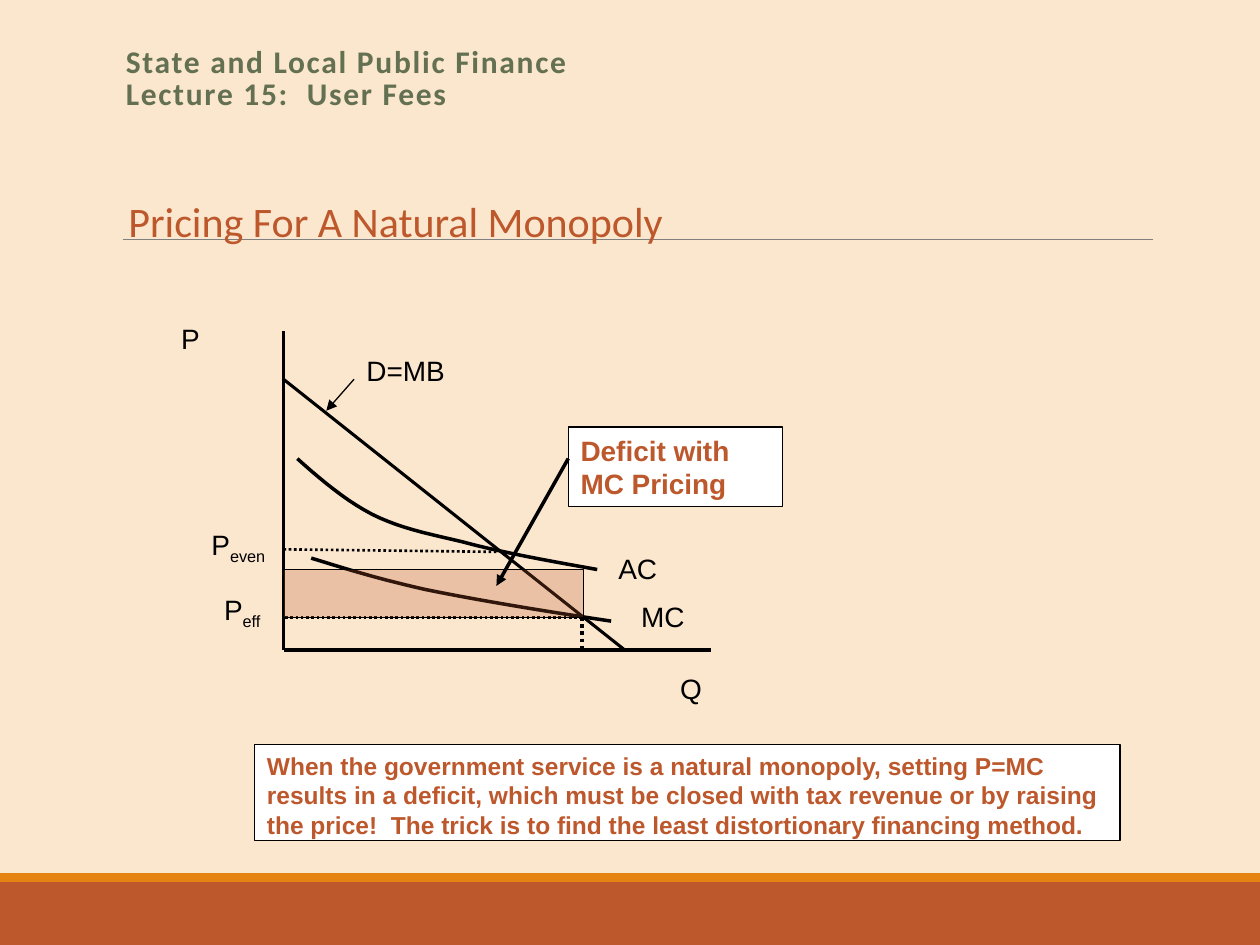
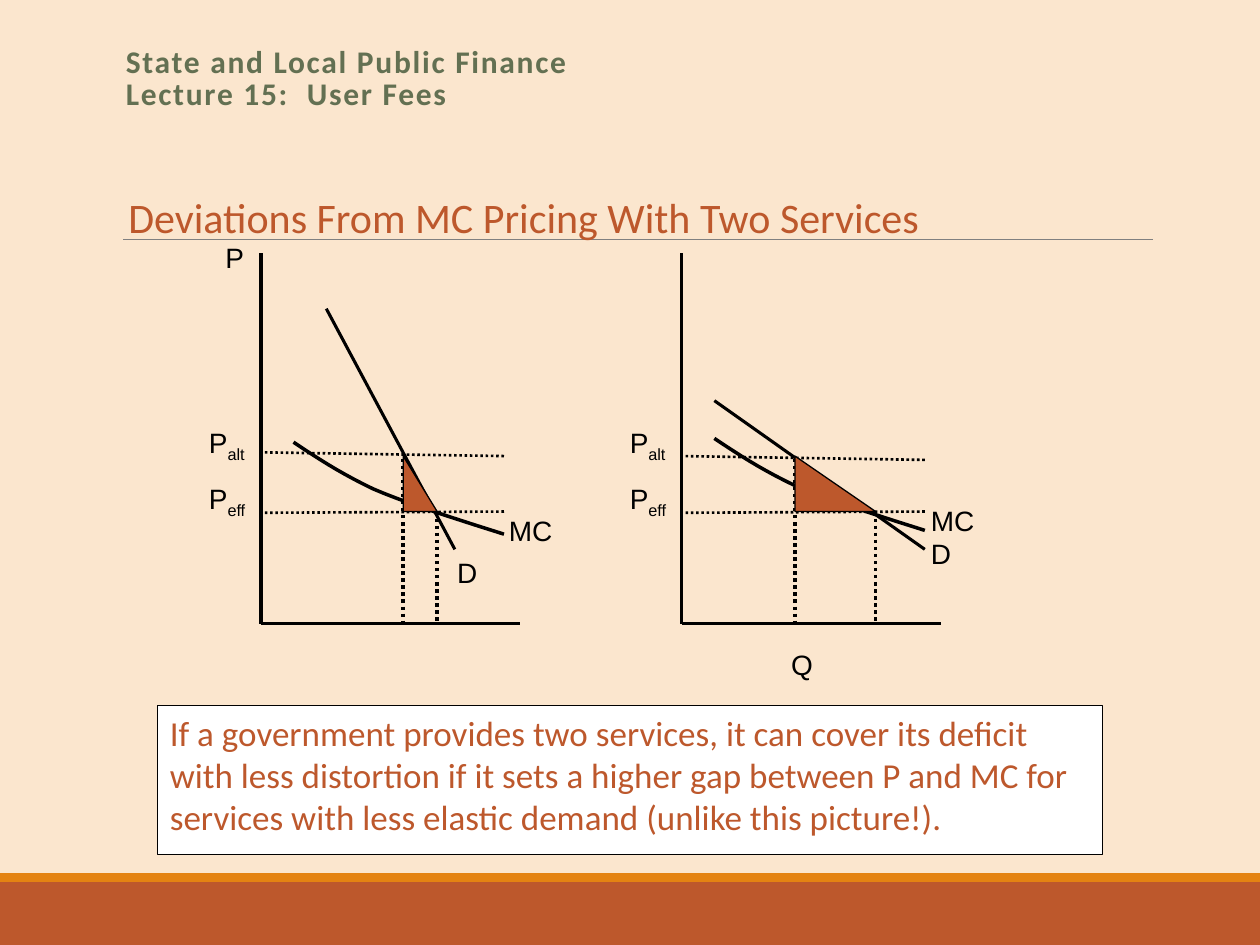
from lxml import etree
from pptx import Presentation, util as u
from pptx.dml import color
from pptx.enum import dml, shapes, text
from pptx.oxml import ns

RUST, ORANGE, GREEN, CREAM = "BD582C", "E48312", "637052", "FBE6CE"
BLACK, WHITE, GREY = "000000", "FFFFFF", "808080"
COURSE = "State and Local Public Finance\nLecture 15:  User Fees"
LABEL = {"size": u.Pt(16), "name": "Arial"}
LABEL_BOLD = LABEL | {"bold": True}
NOTE_BOLD = {"size": u.Pt(14), "name": "Arial", "bold": True}
NOTE = {"size": u.Pt(20), "name": "Calibri"}
TITLE = {"size": u.Pt(24), "name": "Calibri"}
HEADER = {"size": u.Pt(18), "name": "Calibri", "bold": True}


def rgb(value):
    """Turn a hex string into a colour."""
    return color.RGBColor.from_string(value)


def inches(*values):
    """Turn numbers into lengths."""
    return [u.Inches(value) for value in values]


def bezier(start, *segments, steps=10):
    """Sample points along joined cubic curves."""
    points = [start]
    for first, second, end in segments:
        corners = (points[-1], first, second, end)
        for step in range(1, steps + 1):
            t = step / steps
            weights = ((1 - t) ** 3, 3 * t * (1 - t) ** 2, 3 * t * t * (1 - t), t ** 3)
            points.append(tuple(sum(w * p[axis] for w, p in zip(weights, corners))
                                for axis in (0, 1)))
    return points


class Lecture:
    """Hold the deck style and the current slide."""

    def __init__(self):
        """Start an empty deck."""
        self.deck = Presentation()
        self.deck.slide_width, self.deck.slide_height = inches(10, 7.5)
        self.page = None

    def slide(self, title, top, width, wrap=True):
        """Add a slide with background, bands, rule, header and title."""
        self.page = self.deck.slides.add_slide(self.deck.slide_layouts[6])
        fill = self.page.background.fill
        fill.solid()
        fill.fore_color.rgb = rgb(CREAM)
        self.shape((0, 7, 10, 0.5), RUST, outline=None)
        self.shape((0, 6.93, 10, 0.07), ORANGE, outline=None)
        self.line((0.98, 1.9), (9.15, 1.9), 0.5, hue=GREY)
        self.label(COURSE, (0.9, 0.33, 8.25, 0.65), HEADER, GREEN, spacing=0.85, tracking=1)
        self.label(title, (0.92, top, width, 0.5), TITLE, RUST, wrap=wrap)

    def set_text(self, box, content, style, hue, wrap=True, spacing=None, tracking=None):
        """Fill a shape with text, where an underscore starts a subscript."""
        frame = box.text_frame
        frame.word_wrap = wrap
        frame.vertical_anchor = text.MSO_ANCHOR.TOP
        para = frame.paragraphs[0]
        para.alignment = text.PP_ALIGN.LEFT
        if spacing:
            para.line_spacing = spacing
        for row, words in enumerate(content.split("\n")):
            if row:
                para.add_line_break()
            for part, piece in enumerate(words.split("_")):
                span = para.add_run()
                span.text = piece
                for name, value in style.items():
                    setattr(span.font, name, value)
                span.font.color.rgb = rgb(hue)
                marks = span._r.get_or_add_rPr()
                if part:
                    marks.set("baseline", "-25000")
                if tracking:
                    marks.set("spc", str(tracking * 100))

    def label(self, content, place, style=LABEL, hue=BLACK, **options):
        """Add a text box."""
        box = self.page.shapes.add_textbox(*inches(*place))
        self.set_text(box, content, style, hue, **options)

    def shape(self, place, fill, outline=BLACK, kind="RECTANGLE", alpha=None):
        """Add a filled preset shape."""
        box = self.page.shapes.add_shape(getattr(shapes.MSO_SHAPE, kind), *inches(*place))
        box.shadow.inherit = False
        box.fill.solid()
        box.fill.fore_color.rgb = rgb(fill)
        if alpha:
            tint = box._element.spPr.find(".//" + ns.qn("a:srgbClr"))
            etree.SubElement(tint, ns.qn("a:alpha")).set("val", str(alpha * 1000))
        if outline:
            self.stroke(box.line, 0.75, outline)
        else:
            box.line.fill.background()
        return box

    def note(self, content, place, style):
        """Add a white box with rust text."""
        self.set_text(self.shape(place, WHITE), content, style, RUST)

    def stroke(self, line, width, hue=BLACK, dotted=False):
        """Format an outline."""
        line.color.rgb = rgb(hue)
        formats = {"width": u.Pt(width)}
        if dotted:
            formats["dash_style"] = dml.MSO_LINE.ROUND_DOT
        for name, value in formats.items():
            setattr(line, name, value)

    def line(self, start, end, width=2, hue=BLACK, dotted=False, arrow=False):
        """Add a straight line or arrow."""
        wire = self.page.shapes.add_connector(
            shapes.MSO_CONNECTOR.STRAIGHT, *inches(*start, *end))
        self.stroke(wire.line, width, hue, dotted)
        properties = wire._element.spPr
        if arrow:
            outline = properties.find(ns.qn("a:ln"))
            etree.SubElement(outline, ns.qn("a:tailEnd")).set("type", "triangle")
        etree.SubElement(properties, ns.qn("a:effectLst"))

    def curve(self, *knots):
        """Add an open smooth curve."""
        points = [inches(*point) for point in bezier(*knots)]
        builder = self.page.shapes.build_freeform(*points[0])
        builder.add_line_segments(points[1:], close=False)
        outline = builder.convert_to_shape()
        outline.shadow.inherit = False
        outline.fill.background()
        self.stroke(outline.line, 2)

    def axes(self, left, top, right, bottom):
        """Add a price axis and a quantity axis."""
        self.line((left, top), (left, bottom))
        self.line((left, bottom), (right, bottom))


def monopoly(lecture):
    """Draw the natural monopoly slide."""
    lecture.slide("Pricing For A Natural Monopoly", 1.5, 4.48, wrap=False)
    left, bottom, efficient = 2.25, 5.16, (4.62, 4.9)
    lecture.axes(left, 2.63, 5.64, bottom)
    lecture.line((left, 3.01), (4.96, bottom), 1.75)
    for content, place in (
        ("P", (1.34, 2.5, 0.34, 0.51)),
        ("Q", (5.3, 5.28, 0.34, 0.51)),
        ("AC", (4.81, 4.33, 0.57, 0.38)),
        ("D=MB", (2.81, 2.76, 1.13, 0.38)),
        ("P_eff", (1.68, 4.65, 0.91, 0.38)),
        ("P_even", (1.58, 4.14, 0.91, 0.38)),
        ("MC", (4.99, 4.71, 0.57, 0.38)),
    ):
        lecture.label(content, place)
    lecture.note(
        "When the government service is a natural monopoly, setting P=MC results in a deficit, "
        "which must be closed with tax revenue or by raising the price!  The trick is to find "
        "the least distortionary financing method.", (2.02, 5.91, 6.87, 0.76), NOTE_BOLD)
    lecture.curve((2.36, 3.64), ((2.55, 3.81), (2.74, 3.97), (2.95, 4.08)),
                  ((3.17, 4.19), (3.37, 4.23), (3.67, 4.3)),
                  ((3.96, 4.38), (4.35, 4.45), (4.74, 4.52)))
    lecture.curve((2.47, 4.43), ((2.73, 4.51), (2.98, 4.59), (3.38, 4.68)),
                  ((3.77, 4.76), (4.31, 4.85), (4.85, 4.93)))
    lecture.line(efficient, (left, efficient[1]), 1.5, dotted=True)
    lecture.line((3.94, 4.38), (left, 4.36), 1.5, dotted=True)
    lecture.line((2.81, 3.01), (2.59, 3.26), 0.75, arrow=True)
    lecture.shape((left, 4.52, 2.38, 0.38), RUST, alpha=26)
    lecture.note("Deficit with MC Pricing", (4.51, 3.39, 1.7, 0.63), LABEL_BOLD)
    lecture.line((4.51, 3.64), (3.94, 4.65), arrow=True)
    lecture.line(efficient, (efficient[0], bottom), dotted=True)


def service(lecture, left, demand, alternative, curve_top, quantities, labels):
    """Draw one market with its demand, marginal cost and welfare loss."""
    right, bottom, efficient = left + 1.93, 4.95, 4.06
    low, high = quantities
    lecture.axes(left, 2.01, left + 2.06, bottom)
    lecture.line(*demand, 1.75)
    knots = [(0, 0), (0.18, 0.12), (0.36, 0.24), (0.63, 0.37),
             (0.91, 0.49), (1.29, 0.61), (1.67, 0.73)]
    knots = [(left + 0.26 + x, curve_top + y) for x, y in knots]
    lecture.curve(knots[0], knots[1:4], knots[4:])
    lecture.line((right, efficient), (left, efficient + 0.01), 1.5, dotted=True)
    lecture.line((right, alternative + 0.03), (left, alternative), 1.5, dotted=True)
    lecture.line((high, efficient), (high, bottom), dotted=True)
    lecture.line((low, 3.64), (low, bottom + 0.01), dotted=True)
    lecture.shape((low, 3.62, high - low, 0.44), RUST, kind="RIGHT_TRIANGLE")
    lecture.label("P_eff", (left - 0.51, 3.77, 1.03, 0.44))
    lecture.label("P_alt", (left - 0.51, 3.33, 1.03, 0.44))
    for content, (x, y) in zip(("MC", "D"), labels):
        lecture.label(content, (x, y, 0.64, 0.44))


def two_services(lecture):
    """Draw the slide that compares two services."""
    lecture.slide("Deviations From MC Pricing With Two Services", 1.47, 7.5)
    service(lecture, 2.07, ((2.59, 2.45), (3.61, 4.36)), 3.59, 3.51,
            (3.2, 3.47), ((3.94, 4.03), (3.53, 4.36)))
    service(lecture, 5.41, ((5.67, 3.18), (7.34, 4.36)), 3.62, 3.48,
            (6.31, 6.95), ((7.29, 3.95), (7.29, 4.21)))
    lecture.label("P", (1.69, 1.86, 0.39, 0.59))
    lecture.label("Q", (6.18, 5.09, 0.39, 0.59))
    lecture.note(
        "If a government provides two services, it can cover its deficit with less distortion "
        "if it sets a higher gap between P and MC for services with less elastic demand "
        "(unlike this picture!).", (1.25, 5.6, 7.5, 1.18), NOTE)


def main():
    """Build and save the deck."""
    lecture = Lecture()
    monopoly(lecture)
    two_services(lecture)
    lecture.deck.save("out.pptx")


if __name__ == "__main__":
    main()
